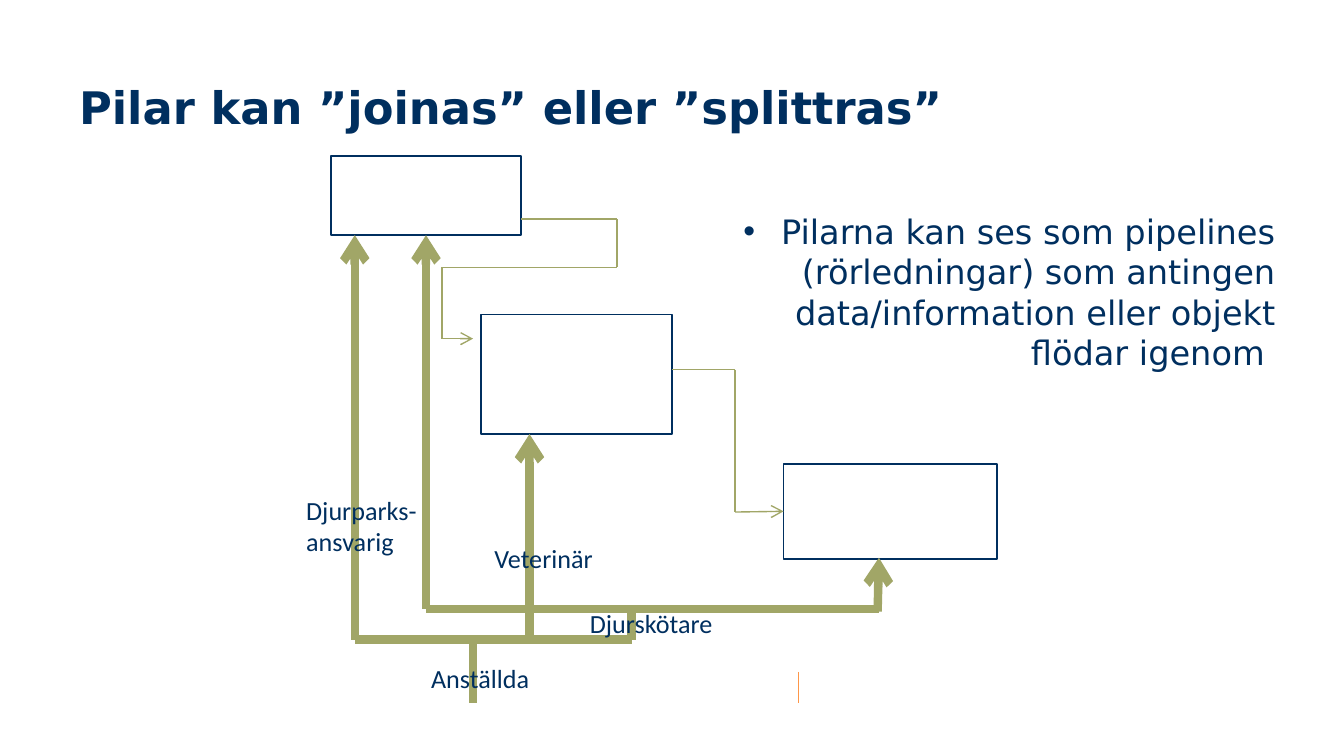
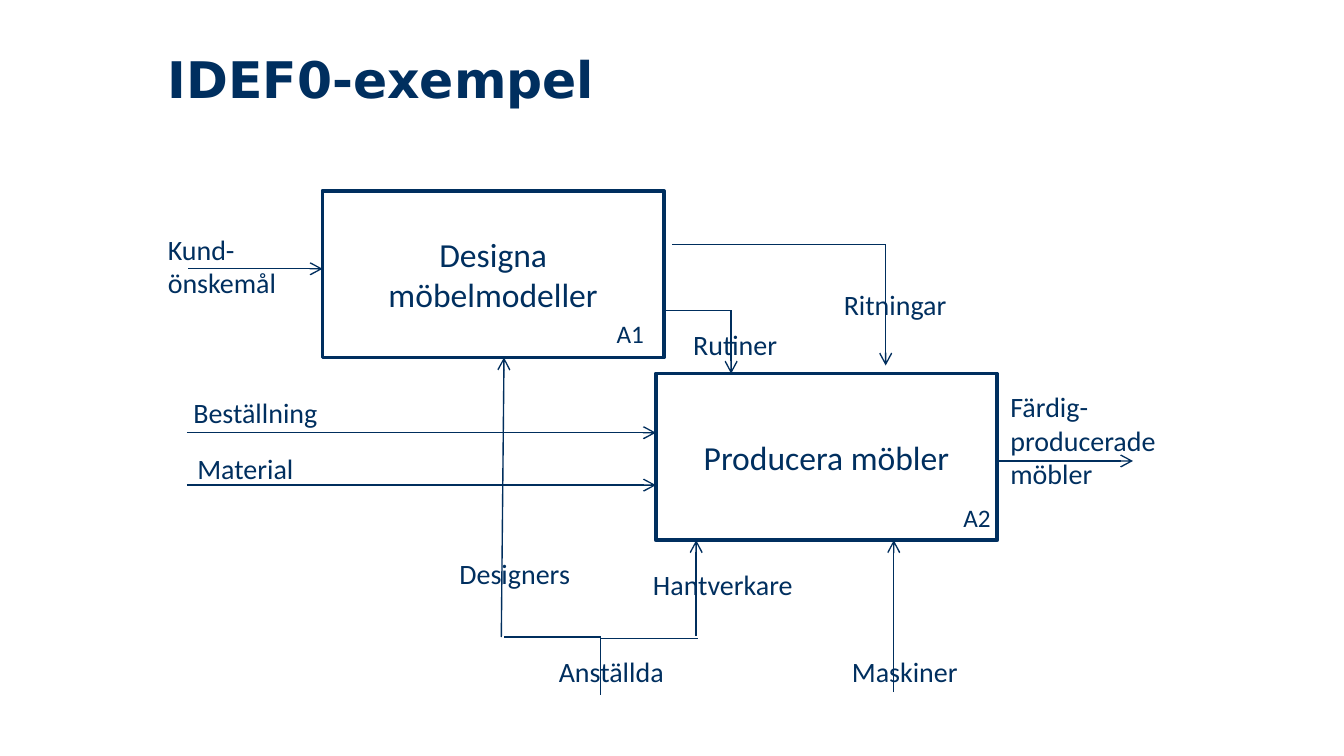
from dataclasses import dataclass

from lxml.etree import SubElement
from pptx import Presentation
from pptx.dml.color import RGBColor
from pptx.enum.shapes import MSO_CONNECTOR as LINE, MSO_SHAPE as SHAPE
from pptx.enum.text import MSO_ANCHOR as ANCHOR, MSO_AUTO_SIZE as FIT, PP_ALIGN as ALIGN
from pptx.oxml.ns import qn
from pptx.util import Inches, Pt

NAVY = RGBColor(0x00, 0x2F, 0x5F)
ARROW_NAVY = RGBColor(0x00, 0x2E, 0x5D)
OLIVE = RGBColor(0xA1, 0xA6, 0x67)
ORANGE = RGBColor(0xFE, 0x97, 0x49)
WHITE = RGBColor(0xFF, 0xFF, 0xFF)
HEADING_FONT = "DejaVu Sans"
LABEL_FONT = "Calibri"
LEFT, BOTTOM = 1, 2
THIN, THICK = 0.75, 4.5


@dataclass
class Region:
    """An area of a page; everything in it is placed from its top left corner."""
    page: object
    left: float
    top: float
    width: float
    height: float

    def at(self, x, y):
        return Inches(self.left + x), Inches(self.top + y)

    def text(self, x, y, width, height, lines):
        box = self.page.shapes.add_textbox(*self.at(x, y), Inches(width), Inches(height))
        box.text_frame.word_wrap = True
        box.text_frame.text = lines
        return box.text_frame

    def label(self, x, y, width, height, lines, size):
        frame = self.text(x, y, width, height, lines)
        frame.auto_size = FIT.SHAPE_TO_FIT_TEXT
        for para in frame.paragraphs:
            style(para, size, LABEL_FONT)

    def activity(self, x, y, width, height, weight, name=""):
        box = self.page.shapes.add_shape(
            SHAPE.RECTANGLE, *self.at(x, y), Inches(width), Inches(height))
        box.shadow.inherit = False
        box.fill.solid()
        box.fill.fore_color.rgb = WHITE
        box.line.color.rgb = NAVY
        box.line.width = Pt(weight)
        if name:
            frame = box.text_frame
            frame.word_wrap = True
            frame.vertical_anchor = ANCHOR.MIDDLE
            frame.text = name
            frame.paragraphs[0].alignment = ALIGN.CENTER
            style(frame.paragraphs[0], 18, LABEL_FONT)
        return box

    def flow(self, points, color, weight=THIN, arrow=True):
        """Straight pieces through the points; returns the last piece."""
        for start, end in zip(points, points[1:]):
            piece = self.page.shapes.add_connector(
                LINE.STRAIGHT, *self.at(*start), *self.at(*end))
            piece.line.color.rgb = color
            piece.line.width = Pt(weight)
            SubElement(piece._element.spPr, qn("a:effectLst"))
        if arrow:
            SubElement(piece.line._get_or_add_ln(), qn("a:tailEnd"), type="arrow")
        return piece


def style(para, size, font, bold=False):
    para.font.size = Pt(size)
    para.font.name = font
    para.font.bold = bold
    para.font.color.rgb = NAVY


def add_title(region, title, size):
    frame = region.text(0, 0, region.width, region.height, title)
    style(frame.paragraphs[0], size, HEADING_FONT, bold=True)


def add_bullet(region, sentence):
    frame = region.text(0, 0, region.width, region.height, sentence)
    frame.auto_size = FIT.SHAPE_TO_FIT_TEXT
    para = frame.paragraphs[0]
    para.alignment = ALIGN.RIGHT
    para.space_after = Pt(9)
    props = para._p.get_or_add_pPr()
    props.set("marL", str(Inches(0.28)))
    props.set("indent", str(-Inches(0.28)))
    SubElement(props, qn("a:buFont"), typeface="Arial")
    SubElement(props, qn("a:buChar"), char="•")
    style(para, 18, HEADING_FONT)


def draw_pipelines(region):
    # Activities, as steps down to the right
    region.activity(1.58, 1.34, 1.42, 0.89, 1)
    first = region.activity(0.46, 0.16, 1.42, 0.59, 1)
    last = region.activity(3.83, 2.45, 1.59, 0.71, 1)

    # Outputs to the next activity
    region.flow([(3, 1.75), (3.47, 1.75), (3.47, 2.81), (3.83, 2.81)],
                OLIVE).end_connect(last, LEFT)
    region.flow([(1.88, 0.63), (2.59, 0.63), (2.59, 0.99), (1.29, 0.99),
                 (1.29, 1.52), (1.52, 1.52)], OLIVE)

    # Staff pipes that split on their way up
    region.flow([(0.64, 3.76), (0.64, 0.75)], OLIVE, THICK)
    region.flow([(1.17, 3.53), (1.17, 0.75)], OLIVE, THICK).end_connect(first, BOTTOM)
    region.flow([(1.94, 3.76), (1.94, 2.23)], OLIVE, THICK)
    region.flow([(4.54, 3.53), (1.17, 3.53)], OLIVE, THICK, arrow=False)
    region.flow([(2.7, 3.53), (2.7, 3.76), (0.64, 3.76)], OLIVE, THICK, arrow=False)
    region.flow([(1.52, 3.76), (1.52, 4.23)], OLIVE, THICK, arrow=False)
    region.flow([(3.94, 4), (3.94, 4.23)], ORANGE, arrow=False)

    # Pipe names
    for x, y, name in [(1.11, 3.88, "Anställda"), (1.58, 2.99, "Veterinär"),
                       (2.29, 3.47, "Djurskötare")]:
        region.label(x, y, 2.36, 0.34, name, 14)
    region.label(0.18, 2.63, 1.34, 0.57, "Djurparks-\nansvarig", 14)
    region.flow([(4.53, 3.55), (4.54, 3.15)], OLIVE, THICK)


def draw_furniture_model(region):
    # Activities with their numbers
    for x, y, name in [(1.4, 0.42, "Designa möbelmodeller"),
                       (3.88, 1.78, "Producera möbler")]:
        region.activity(x, y, 2.54, 1.24, 2, name)
    for x, y, number in [(3.49, 1.32, "A1"), (6.07, 2.69, "A2")]:
        region.label(x, y, 0.59, 0.33, number, 13.5)

    # Arrows
    for points in [
        [(0.4, 1), (1.4, 1)],
        [(0.39, 2.22), (3.88, 2.22)],
        [(0.39, 2.61), (3.88, 2.61)],
        [(6.42, 2.43), (7.43, 2.43)],
        [(4, 0.82), (5.59, 0.82), (5.59, 1.72)],
        [(3.94, 1.31), (4.44, 1.31), (4.44, 1.78)],
        [(4.18, 3.73), (4.18, 3.02)],
        [(5.65, 4.15), (5.65, 3.02)],
        [(2.73, 3.74), (2.75, 1.66)],
    ]:
        region.flow(points, ARROW_NAVY)

    # Branch from the staff to both activities
    region.flow([(4.19, 3.75), (3.47, 3.75), (3.47, 4.17)], ARROW_NAVY, arrow=False)
    region.flow([(3.47, 3.74), (2.75, 3.74)], ARROW_NAVY, arrow=False)

    # Arrow names
    for x, y, width, height, name in [
        (0.15, 0.68, 1.48, 0.61, "Kund-önskemål"),
        (0.34, 1.89, 1.19, 0.35, "Beställning"),
        (0.37, 2.31, 1, 0.35, "Material"),
        (6.42, 1.85, 1.3, 0.86, "Färdig-producerade möbler"),
        (4.06, 1.39, 1, 0.35, "Rutiner"),
        (5.18, 1.09, 2.54, 0.35, "Ritningar"),
        (3.76, 3.17, 1.42, 0.35, "Hantverkare"),
        (5.24, 3.82, 1, 0.35, "Maskiner"),
        (2.32, 3.09, 1.18, 0.35, "Designers"),
        (3.06, 3.82, 1, 0.35, "Anställda"),
    ]:
        region.label(x, y, width, height, name, 15)


def main():
    deck = Presentation()
    deck.slide_width = Inches(10)
    deck.slide_height = Inches(10) * 9 // 16
    blank = deck.slide_layouts[6]

    page = deck.slides.add_slide(blank)
    add_title(Region(page, 0.49, 0.54, 7.49, 0.65),
              "Pilar kan ”joinas” eller ”splittras”", 24)
    draw_pipelines(Region(page, 2, 1, 5.5, 4.3))
    add_bullet(Region(page, 5.29, 1.52, 4.3, 1.31),
               "Pilarna kan ses som pipelines (rörledningar) som antingen "
               "data/information eller objekt flödar igenom ")

    page = deck.slides.add_slide(blank)
    add_title(Region(page, 1.15, 0.31, 6.75, 0.94), "IDEF0-exempel", 27)
    draw_furniture_model(Region(page, 1, 1, 8, 4.2))

    deck.save("out.pptx")


if __name__ == "__main__":
    main()
